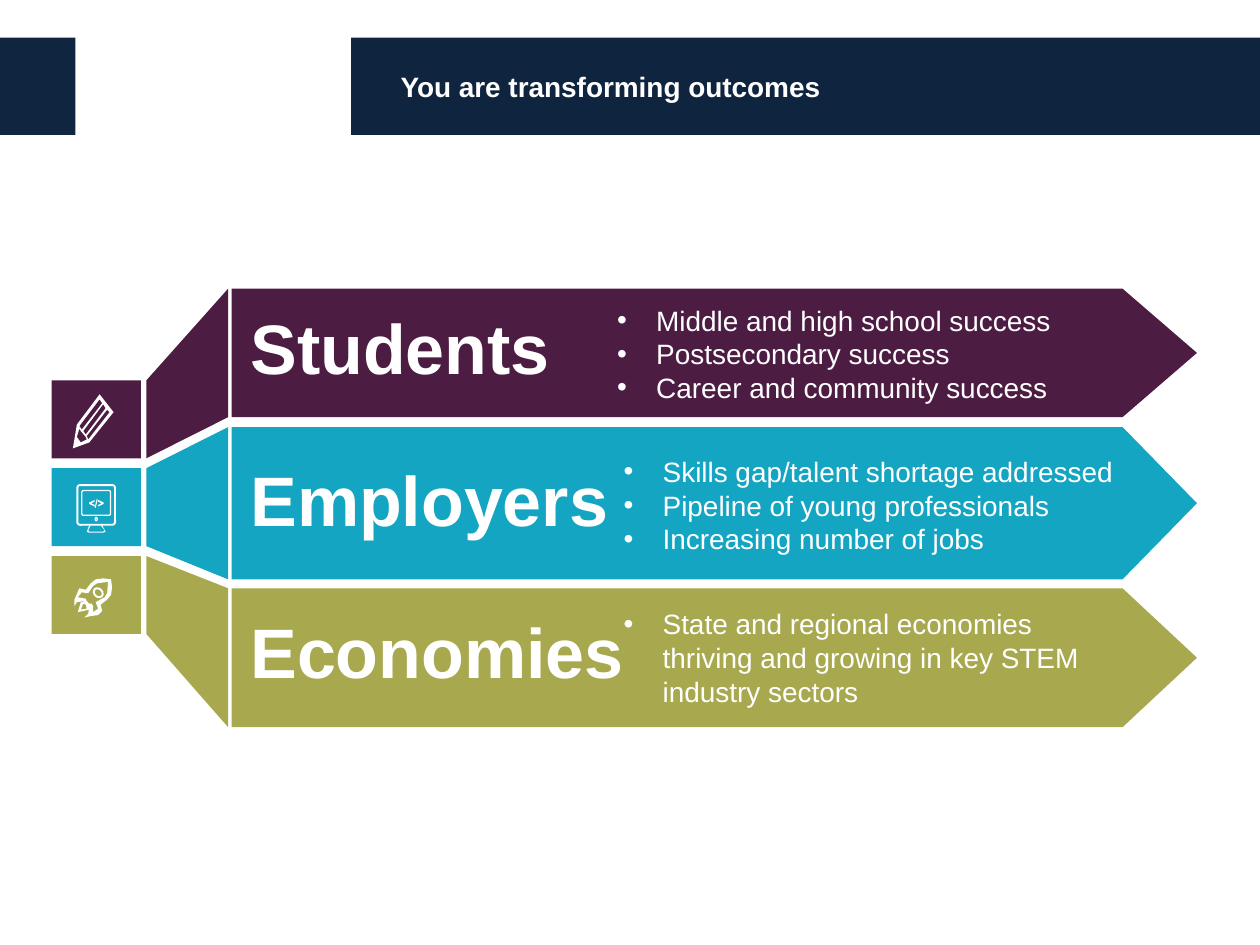
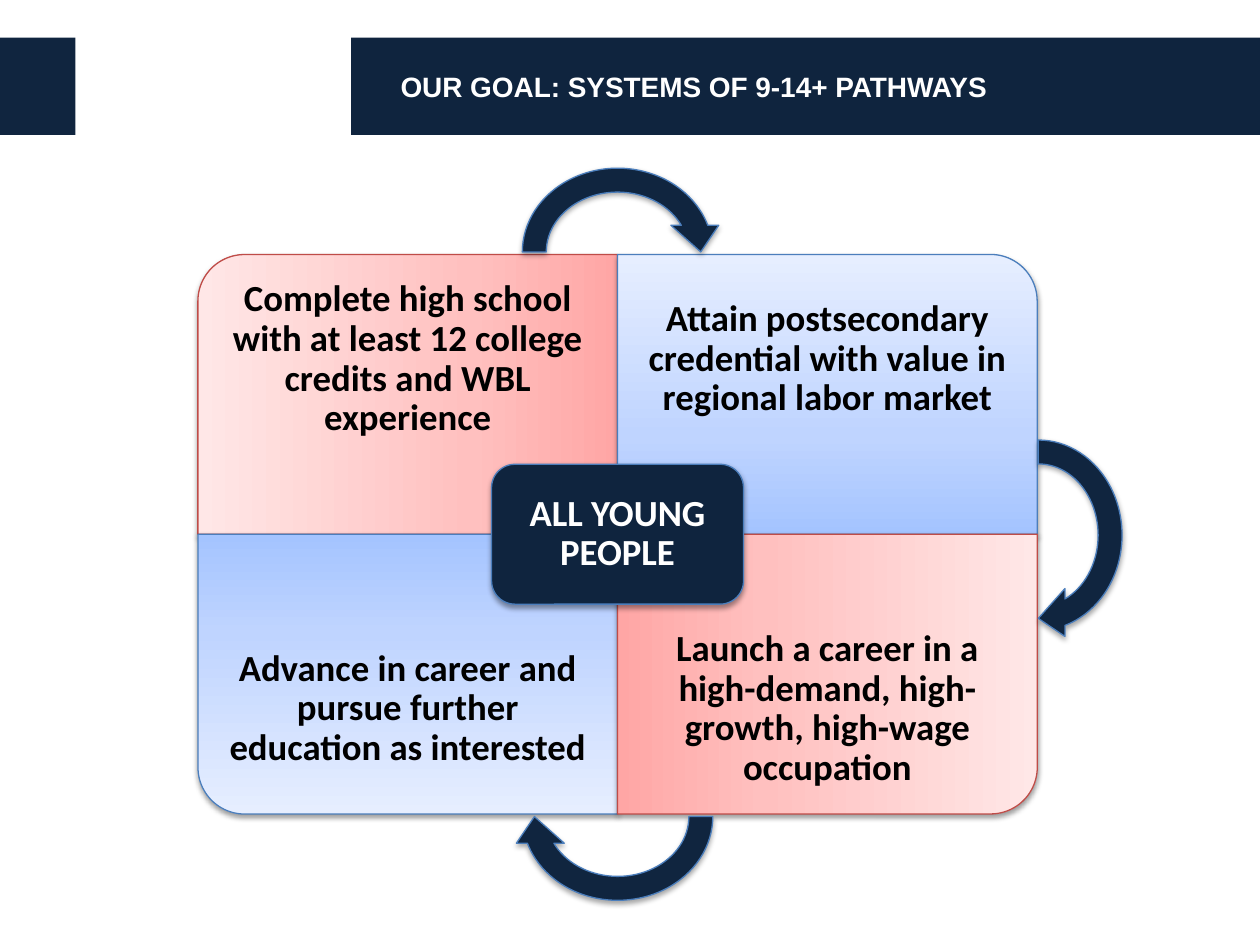
"""Build two slides on the outcomes and goal of 9-14+ pathways."""
from copy import deepcopy

from lxml.etree import SubElement
from pptx import Presentation
from pptx.dml.color import RGBColor as Rgb
from pptx.enum.shapes import MSO_SHAPE as Shape
from pptx.enum.text import MSO_ANCHOR as Anchor, PP_ALIGN as Align
from pptx.oxml.ns import qn
from pptx.util import Cm, Pt

COLOURS = {
    "navy": "10253F", "band": "0F243E", "white": "FFFFFF", "black": "000000",
    "plum": "4D1C43", "teal": "14A5C2", "olive": "A8A94F",
    "blue line": "4B7EBC", "red line": "BF4C48",
}
TINTS = {
    "red line": ("FFA6A5", "FFC0BF", "FFE7E7"),
    "blue line": ("A4C4FF", "BFD4FF", "E6EEFF"),
}
TITLES = ["You are transforming outcomes", "OUR GOAL: SYSTEMS OF 9-14+ PATHWAYS"]


def paint(shape, fill=None, line=None, weight=0.75, shadow=0):
    shape.shadow.inherit = False
    if fill:
        shape.fill.solid()
        shape.fill.fore_color.rgb = Rgb.from_string(COLOURS[fill])
    else:
        shape.fill.background()
    if line:
        shape.line.color.rgb = Rgb.from_string(COLOURS[line])
        shape.line.width = Pt(weight)
    else:
        shape.line.fill.background()
    if shadow:
        effects = shape.element.spPr.find(qn("a:effectLst"))
        outer = SubElement(effects, qn("a:outerShdw"), blurRad="40000",
                           dist="20000", dir="5400000", rotWithShape="0")
        black = SubElement(outer, qn("a:srgbClr"), val=COLOURS["black"])
        SubElement(black, qn("a:alpha"), val=str(shadow * 1000))


def write(frame, lines, size, colour="white", bold=True, face="Arial",
          align=Align.LEFT, spacing=1.0, bullets=False):
    for number, line in enumerate(lines):
        paragraph = frame.add_paragraph() if number else frame.paragraphs[0]
        paragraph.text = line
        paragraph.alignment = align
        paragraph.line_spacing = spacing
        if bullets:
            properties = paragraph._p.get_or_add_pPr()
            properties.set("marL", str(Cm(0.79)))
            properties.set("indent", str(-Cm(0.79)))
            SubElement(properties, qn("a:buFont"), typeface="Arial")
            SubElement(properties, qn("a:buChar"), char="•")
        paragraph.font.size = Pt(size)
        paragraph.font.name = face
        paragraph.font.bold = bold
        paragraph.font.color.rgb = Rgb.from_string(COLOURS[colour])


deck = Presentation()
deck.slide_width, deck.slide_height = Cm(25.4), Cm(19.05)
layout = deck.slide_layouts[5]
for placeholder in list(layout.placeholders):
    if placeholder.placeholder_format.idx >= 10:
        layout.shapes.element.remove(placeholder.element)

outcomes, goal = [deck.slides.add_slide(layout) for _ in TITLES]
header = [
    outcomes.shapes.add_shape(Shape.RECTANGLE, Cm(left), Cm(0.76), Cm(width), Cm(1.96))
    for left, width in [(0, 1.52), (7.08, 18.32)]
]
for bar, colour in zip(header, ["navy", "band"]):
    paint(bar, colour)
    layout.shapes.element.insert(2, bar.element)

for slide, heading in zip([outcomes, goal], TITLES):
    title = slide.shapes.title
    title.left, title.top, title.width, title.height = Cm(7.82), Cm(0.76), Cm(16.3), Cm(1.96)
    title.text_frame.vertical_anchor = Anchor.MIDDLE
    write(title.text_frame, [heading], 16)

beneficiaries = [
    ("Students", "plum", 5.82, 8.41, 6.02, 12.19, 10.26,
     ["Middle and high school success", "Postsecondary success",
      "Career and community success"]),
    ("Employers", "teal", 8.61, 11.68, 9.07, 12.32, 10.67,
     ["Skills gap/talent shortage addressed", "Pipeline of young professionals",
      "Increasing number of jobs"]),
    ("Economies", "olive", 11.86, 14.66, 12.14, 12.32, 10.26,
     ["State and regional economies thriving and growing in key STEM industry sectors"]),
]
pencil = [
    [(2.29, 8.31), (2.01, 7.95), (1.55, 8.56), (1.47, 9.04), (1.8, 8.92)],
    [(1.78, 8.86), (1.75, 8.79), (2.16, 8.26), (2.21, 8.31)],
    [(1.63, 8.92), (1.55, 8.81), (1.6, 8.64), (1.63, 8.69), (1.73, 8.81), (1.75, 8.86)],
    [(2.13, 8.23), (1.73, 8.76), (1.68, 8.69), (2.08, 8.15)],
    [(2.01, 8.05), (2.06, 8.13), (1.65, 8.66), (1.6, 8.59)],
]
stand = [
    [(1.8, 10.59), (1.75, 10.72), (1.8, 10.74), (2.08, 10.74), (2.13, 10.72), (2.06, 10.59)],
    [(1.83, 10.59), (1.78, 10.69), (1.8, 10.72), (2.08, 10.72), (2.11, 10.69), (2.03, 10.59)],
]
bracket = [(1.8, 10.16), (1.91, 10.21), (1.91, 10.18), (1.84, 10.15),
           (1.91, 10.11), (1.91, 10.08), (1.8, 10.13)]
code_mark = [
    bracket,
    [(3.89 - x, y) for x, y in bracket],
    [(1.95, 10.06), (1.97, 10.07), (1.93, 10.24), (1.91, 10.23)],
]
rocket = [
    [(1.5, 12.22), (1.5, 12.09), (1.6, 11.86), (1.73, 11.89), (1.83, 11.76),
     (1.93, 11.68), (2.08, 11.66), (2.24, 11.68), (2.26, 11.84), (2.24, 11.99),
     (2.16, 12.09), (2.03, 12.19), (2.06, 12.32), (1.98, 12.4), (1.83, 12.42),
     (1.7, 12.45), (1.78, 12.37), (1.8, 12.24), (1.68, 12.12), (1.55, 12.14)],
    [(1.96, 11.76), (1.88, 11.81), (1.78, 11.96), (1.75, 11.96), (1.65, 11.94),
     (1.57, 12.04), (1.73, 12.07), (1.75, 12.12), (1.8, 12.17), (1.85, 12.17),
     (1.88, 12.22), (1.88, 12.34), (1.98, 12.27), (1.93, 12.14), (2.11, 12.04),
     (2.16, 11.96), (2.18, 11.73)],
]
flame = [
    [(1.57, 12.34), (1.63, 12.14), (1.7, 12.12), (1.8, 12.22), (1.8, 12.29)],
    [(1.73, 12.19), (1.68, 12.17), (1.63, 12.29), (1.75, 12.27)],
]

outlines = []
for row, (name, colour, top, bottom, *_) in enumerate(beneficiaries):
    tile_top = 7.67 + 1.77 * row
    tile = outcomes.shapes.add_shape(Shape.RECTANGLE, Cm(1.04), Cm(tile_top), Cm(1.8), Cm(1.57))
    paint(tile, colour)
    middle = (top + bottom) / 2
    blade = [(2.95, tile_top), (4.6, top), (4.6, bottom), (2.95, tile_top + 1.57)]
    arrow = [(4.67, top), (22.63, top), (24.13, middle), (22.63, bottom), (4.67, bottom)]
    outlines += [(colour, [blade]), (colour, [arrow])]
outlines += [("white", icon) for icon in (pencil, stand, code_mark, rocket, flame)]

for colour, contours in outlines:
    builder = None
    for contour in contours:
        points = [(Cm(x), Cm(y)) for x, y in contour]
        if builder is None:
            builder = outcomes.shapes.build_freeform(*points[0])
        else:
            builder.move_to(*points[0])
        builder.add_line_segments(points[1:], close=True)
    paint(builder.convert_to_shape(), colour)

icon_rings = [
    (Shape.ROUNDED_RECTANGLE, 1.56, 9.78, 0.76, 0.8, 0, 1.1),
    (Shape.ROUNDED_RECTANGLE, 1.65, 9.89, 0.58, 0.5, 0, 0.7),
    (Shape.OVAL, 1.92, 10.43, 0.04, 0.07, 0, 0.7),
    (Shape.OVAL, 1.88, 11.87, 0.2, 0.16, 45, 1.1),
]
for kind, left, top, width, height, turn, weight in icon_rings:
    ring = outcomes.shapes.add_shape(kind, Cm(left), Cm(top), Cm(width), Cm(height))
    ring.rotation = turn
    if kind == Shape.ROUNDED_RECTANGLE:
        ring.adjustments[0] = 0.07
    paint(ring, line="white", weight=weight)

for name, _, _, _, text_top, left, width, results in beneficiaries:
    label = outcomes.shapes.add_textbox(Cm(4.8), Cm(text_top), Cm(8.1), Cm(1.96)).text_frame
    label.word_wrap = False
    write(label, [name], 40)
    details = outcomes.shapes.add_textbox(
        Cm(left), Cm(text_top - 0.03), Cm(width), Cm(2.31)).text_frame
    details.word_wrap = True
    write(details, results, 16, bold=False, bullets=True)

LEFT, TOP, WIDE, HIGH, TEXT_HIGH = 3.99, 5.13, 8.46, 5.64, 4.23
steps = [
    ("Complete high school with at least 12 college credits and WBL experience",
     0, 0, 270, "red line"),
    ("Attain postsecondary credential with value in regional labor market",
     1, 0, 0, "blue line"),
    ("Advance in career and pursue further education as interested",
     0, 1, 180, "blue line"),
    ("Launch a career in a high-demand, high-growth, high-wage occupation",
     1, 1, 90, "red line"),
]
for step, column, row, turn, line in steps:
    left, top = LEFT + column * WIDE, TOP + row * HIGH
    width, height = (HIGH, WIDE) if turn % 180 else (WIDE, HIGH)
    quadrant = goal.shapes.add_shape(
        Shape.ROUND_1_RECTANGLE, Cm(left + (WIDE - width) / 2),
        Cm(top + (HIGH - height) / 2), Cm(width), Cm(height))
    quadrant.rotation = turn
    paint(quadrant, line=line, shadow=38)
    quadrant.fill.gradient()
    quadrant.fill.gradient_angle = 90
    stops = quadrant.element.spPr.find(".//" + qn("a:gsLst"))
    stops.insert(1, deepcopy(stops[0]))
    for stop, position, tint in zip(quadrant.fill.gradient_stops, (0, 0.35, 1), TINTS[line]):
        stop.position = position
        stop.color.rgb = Rgb.from_string(tint)

    text_top = top + row * (HIGH - TEXT_HIGH)
    caption = goal.shapes.add_textbox(
        Cm(left), Cm(text_top), Cm(WIDE), Cm(TEXT_HIGH)).text_frame
    caption.word_wrap = True
    caption.vertical_anchor = Anchor.MIDDLE
    caption.margin_left = caption.margin_right = Cm(0.41)
    caption.margin_top = caption.margin_bottom = Cm(0.41)
    write(caption, [step], 21, "black", face="Calibri", align=Align.CENTER, spacing=0.9)

hub = goal.shapes.add_shape(Shape.ROUNDED_RECTANGLE, Cm(9.91), Cm(9.36), Cm(5.08), Cm(2.82))
paint(hub, "band", "blue line", shadow=38)
hub.text_frame.word_wrap = True
hub.text_frame.vertical_anchor = Anchor.MIDDLE
write(hub.text_frame, ["ALL YOUNG PEOPLE"], 21, face="Calibri",
      align=Align.CENTER, spacing=0.9)

for left, top, turn in [(10.29, 3.15, 0), (18.77, 8.86, 90), (10.29, 14.53, 180)]:
    cycle = goal.shapes.add_shape(Shape.CIRCULAR_ARROW, Cm(left), Cm(top), Cm(4.32), Cm(3.86))
    cycle.rotation = turn
    paint(cycle, "navy", "blue line", shadow=35)

deck.save("out.pptx")
